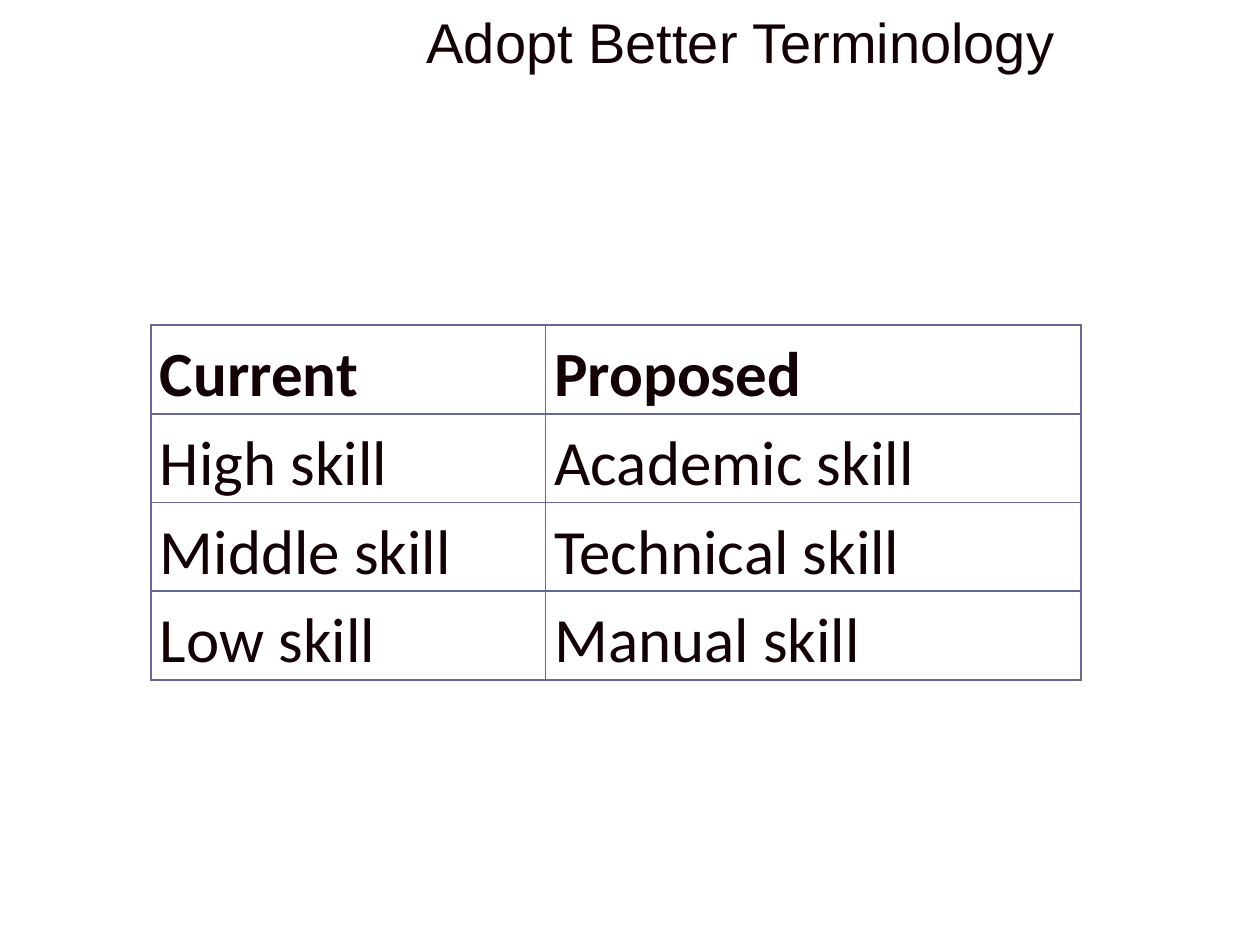
from lxml.etree import SubElement as Sub
from pptx import Presentation
from pptx.dml.color import RGBColor
from pptx.enum.text import MSO_ANCHOR as Anchor, PP_ALIGN as Align
from pptx.oxml.ns import qn
from pptx.util import Inches, Pt

INK = RGBColor(0x13, 0x01, 0x04)
RULE = RGBColor(0x66, 0x66, 0x99)
TERMS = [
    ("Current", "Proposed"),
    ("High skill", "Academic skill"),
    ("Middle skill", "Technical skill"),
    ("Low skill", "Manual skill"),
]


def add_run(para, text, face, size, bold=False):
    run = para.add_run()
    run.text = text
    font = run.font
    font.name, font.size, font.bold = face, Pt(size), bold
    font.color.rgb = INK


def add_title(slide, left, top, width, height):
    title = slide.shapes.title
    title.left, title.top = Inches(left), Inches(top)
    title.width, title.height = Inches(width), Inches(height)
    frame = title.text_frame
    frame.vertical_anchor = Anchor.MIDDLE
    para = frame.paragraphs[0]
    para.alignment = Align.CENTER
    add_run(para, "Adopt Better Terminology", "Arial", 32)


def add_rules(cell):
    props = cell._tc.get_or_add_tcPr()
    for spot, side in enumerate(("lnL", "lnR", "lnT", "lnB")):
        line = Sub(props, qn(f"a:{side}"), w=str(Pt(1)))
        fill = Sub(line, qn("a:solidFill"))
        Sub(fill, qn("a:srgbClr"), val=str(RULE))
        props.insert(spot, line)


def fill_cell(cell, text, bold):
    cell.margin_left = cell.margin_right = Inches(0.07)
    cell.margin_top = cell.margin_bottom = 0
    cell.fill.background()
    add_rules(cell)
    para = cell.text_frame.paragraphs[0]
    para.line_spacing = 1.15
    add_run(para, text, "Calibri", 36, bold)


def add_terms(slide, left, top, widths, height):
    frame = slide.shapes.add_table(
        len(TERMS), len(widths), Inches(left), Inches(top),
        Inches(sum(widths)), Inches(height))
    table = frame.table
    table.horz_banding = False
    for col, width in zip(table.columns, widths):
        col.width = Inches(width)
    for row, terms in enumerate(TERMS):
        for col, text in enumerate(terms):
            fill_cell(table.cell(row, col), text, row == 0)


def main():
    deck = Presentation()
    deck.slide_width, deck.slide_height = Inches(10), Inches(7.5)
    slide = deck.slides.add_slide(deck.slide_layouts[5])
    add_title(slide, 1.92, -0.17, 7.92, 1)
    add_terms(slide, 1.2, 2.58, (3.13, 4.25), 2.76)
    deck.save("out.pptx")


if __name__ == "__main__":
    main()
